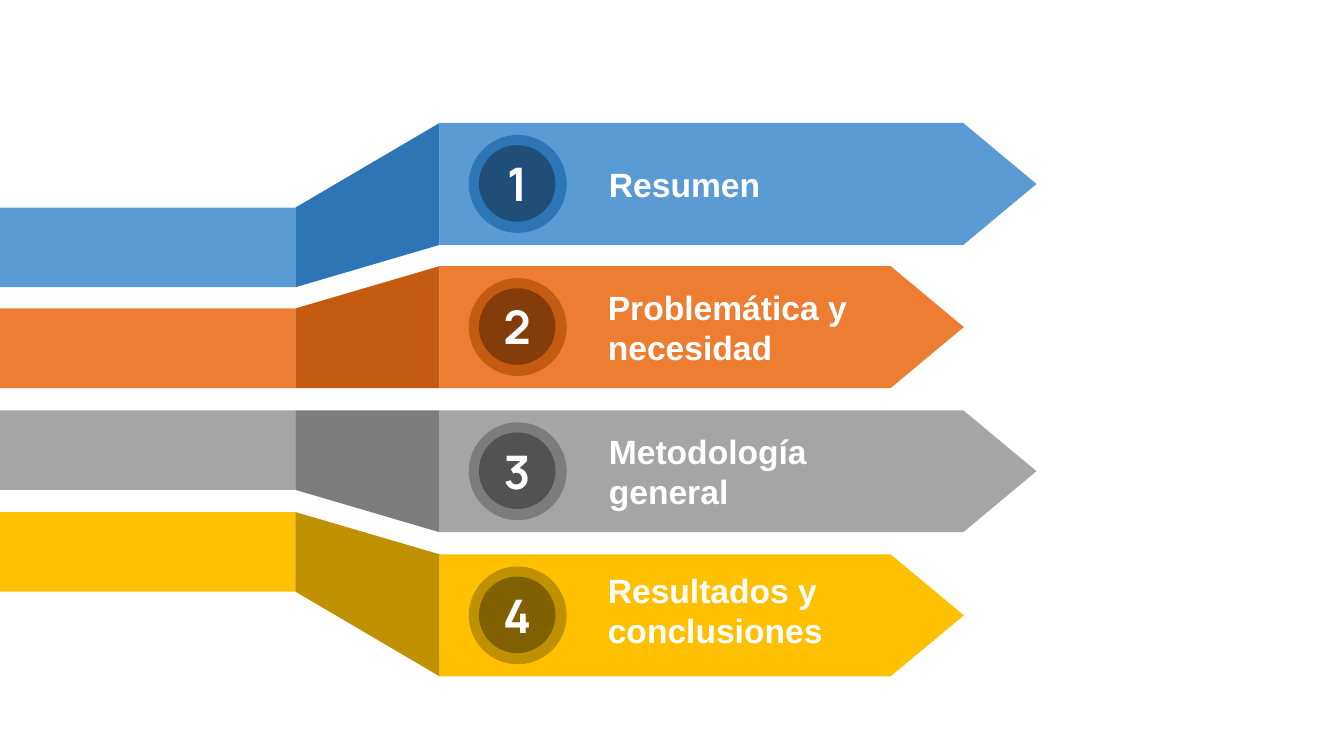
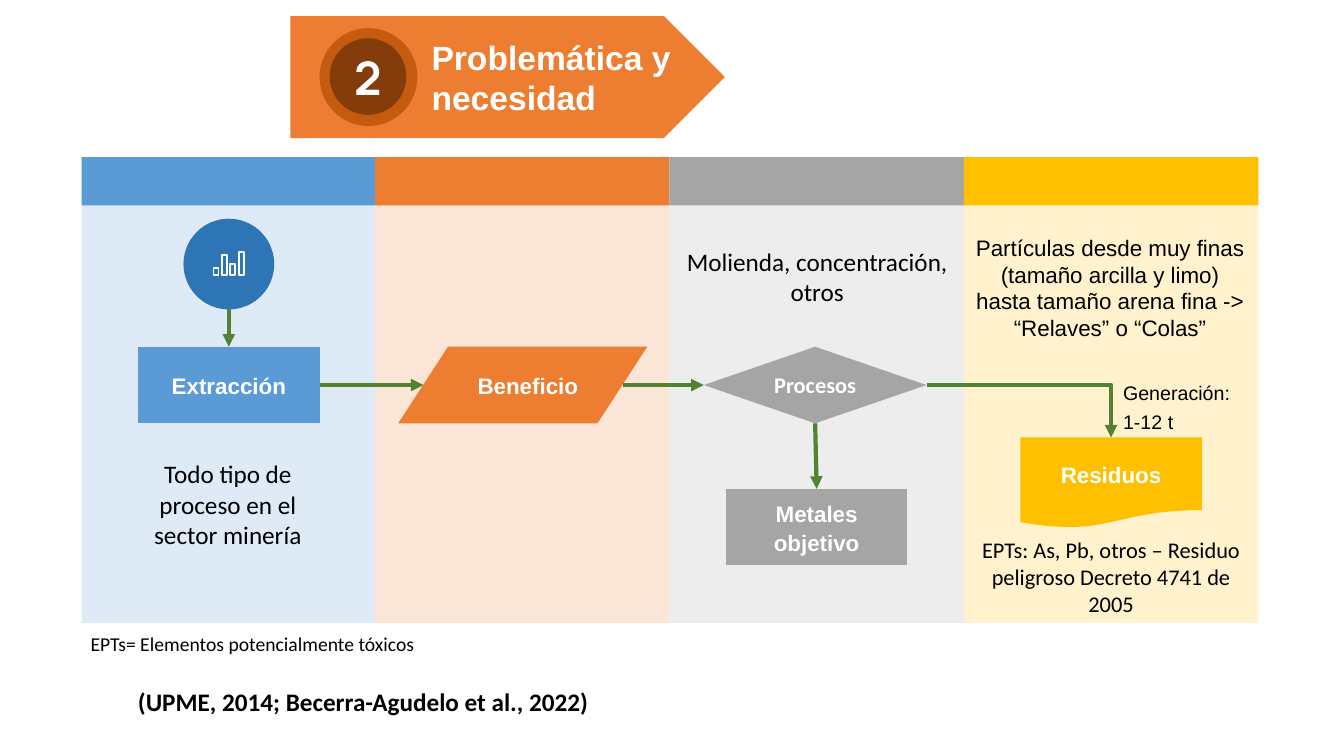
from lxml.etree import SubElement
from pptx import Presentation
from pptx.dml.color import RGBColor
from pptx.enum.shapes import MSO_CONNECTOR as LINK, MSO_SHAPE as KIND
from pptx.enum.text import MSO_ANCHOR as ANCHOR, MSO_AUTO_SIZE as FIT, PP_ALIGN as ALIGN
from pptx.oxml.ns import qn
from pptx.util import Pt

PX = 9144  # 100 px to the inch
COLORS = {
    "blue": "5B9BD5", "blue_ring": "2E75B6", "blue_dark": "1F4E79", "blue_pale": "DEEBF7",
    "orange": "ED7D31", "orange_ring": "C55A11", "orange_dark": "843C0B", "orange_pale": "FBE5D6",
    "gray": "A5A5A5", "gray_ring": "7C7C7C", "gray_dark": "525252", "gray_pale": "EDEDED",
    "gold": "FFC000", "gold_ring": "BF9000", "gold_dark": "806000", "gold_pale": "FFF2CC",
    "white": "FFFFFF", "black": "000000", "green": "548235",
}
RGB = {name: RGBColor.from_string(value) for name, value in COLORS.items()}
HUES = ["blue", "orange", "gray", "gold"]
ARROW_H = 121


def add_filled(slide, kind, box, color):
    shape = slide.shapes.add_shape(kind, *[n * PX for n in box])
    shape.shadow.inherit = False
    shape.fill.solid()
    shape.fill.fore_color.rgb = RGB[color]
    shape.line.fill.background()
    return shape


def write(shape, text, size, font, color="white", bold=True, align=ALIGN.CENTER,
          anchor=ANCHOR.MIDDLE, wrap=True, spacing=None):
    frame = shape.text_frame
    frame.text = text
    frame.word_wrap = wrap
    frame.auto_size = FIT.NONE
    frame.vertical_anchor = anchor
    for paragraph in frame.paragraphs:
        paragraph.alignment = align
        paragraph.line_spacing = spacing
        paragraph.font.size = Pt(size)
        paragraph.font.name = font
        paragraph.font.bold = bold
        paragraph.font.color.rgb = RGB[color]


prs = Presentation()
prs.slide_width, prs.slide_height = 1333 * PX, 750 * PX
agenda = prs.slides.add_slide(prs.slide_layouts[6])
problem = prs.slides.add_slide(prs.slide_layouts[5])

# Agenda: ribbons that fold out towards the arrows
arrow_tops = [122 + 428 * i // 3 for i in range(4)]
for i, (hue, arrow_top) in enumerate(zip(HUES, arrow_tops)):
    strip_top = 206 + 302 * i // 3
    add_filled(agenda, KIND.RECTANGLE, (0, strip_top, 293, 79), hue)
    outline = agenda.shapes.build_freeform(293, strip_top, scale=PX)
    outline.add_line_segments([(436, arrow_top), (436, arrow_top + ARROW_H), (293, strip_top + 79)])
    fold = outline.convert_to_shape()
    fold.shadow.inherit = False
    fold.fill.solid()
    fold.fill.fore_color.rgb = RGB[hue + "_ring"]
    fold.line.fill.background()

# Numbered arrows of both slides: left, top, width, tip share, label left, label top
banners = [
    (agenda, "blue", 1, "Resumen", 436, arrow_tops[0], 592, 0.6, 594, 137),
    (agenda, "orange", 2, "Problemática y necesidad", 436, arrow_tops[1], 520, 0.6, 593, 279),
    (agenda, "gray", 3, "Metodología\ngeneral", 436, arrow_tops[2], 592, 0.6, 594, 422),
    (agenda, "gold", 4, "Resultados y\nconclusiones", 436, arrow_tops[3], 520, 0.6, 593, 560),
    (problem, "orange", 2, "Problemática y necesidad", 288, 16, 431, 0.5, 418, 31),
]
for slide, hue, number, text, left, top, width, tip, label_left, label_top in banners:
    arrow = add_filled(slide, KIND.PENTAGON, (left, top, width, ARROW_H), hue)
    arrow.adjustments[0] = tip
    add_filled(slide, KIND.OVAL, (left + 29, top + 12, 97, 97), hue + "_ring")
    disc = add_filled(slide, KIND.OVAL, (left + 39, top + 22, 76, 76), hue + "_dark")
    write(disc, str(number), 33, "Manrope", wrap=False)

    label_box = [n * PX for n in (label_left, label_top, 289, 91)]
    label = slide.shapes.title
    if label is None:
        label = slide.shapes.add_textbox(*label_box)
    else:
        label.left, label.top, label.width, label.height = label_box
        slide.shapes.element.append(label.element)  # bring the title in front of its arrow
    write(label, text, 24, "Arial", align=ALIGN.LEFT)

# Problem: four columns
for i, hue in enumerate(HUES):
    column_left = 81 + 875 * i // 3
    add_filled(problem, KIND.RECTANGLE, (column_left, 156, 292, 48), hue)
    add_filled(problem, KIND.RECTANGLE, (column_left, 204, 292, 414), hue + "_pale")

# Bar icon in its circle
add_filled(problem, KIND.OVAL, (182, 217, 90, 90), "blue_ring")
for i, bar_top in enumerate([266, 253, 262, 250]):
    bar = add_filled(problem, KIND.RECTANGLE, (212 + 25 * i // 3, bar_top, 5, 273 - bar_top), "blue_ring")
    bar.line.color.rgb = RGB["white"]
    bar.line.width = Pt(1)

# Flow steps
steps = {}
for text, kind, box, hue, font, spacing in [
    ("Extracción", KIND.FLOWCHART_PROCESS, (137, 344, 180, 76), "blue", "Arial", Pt(20.5)),
    ("Beneficio", KIND.FLOWCHART_DATA, (395, 344, 247, 76), "orange", "Arial", Pt(20.5)),
    ("Procesos", KIND.DIAMOND, (698, 344, 221, 76), "gray", "Calibri", None),
    ("Metales objetivo", KIND.FLOWCHART_PROCESS, (720, 485, 180, 76), "gray", "Arial", Pt(20.5)),
    ("Residuos", KIND.FLOWCHART_DOCUMENT, (1012, 434, 180, 90), "gold", "Arial", Pt(20.5)),
]:
    steps[text] = add_filled(problem, kind, box, hue)
    write(steps[text], text, 16, font, spacing=spacing)
steps["Beneficio"].text_frame.margin_left = 20 * PX

# Flow arrows, each end with the step and side it joins
for kind, start, start_joint, end, end_joint in [
    (LINK.STRAIGHT, (227, 307), None, (227, 344), ("Extracción", 0)),
    (LINK.STRAIGHT, (317, 382), ("Extracción", 3), (420, 382), None),
    (LINK.STRAIGHT, (618, 382), None, (698, 382), ("Procesos", 1)),
    (LINK.STRAIGHT, (808, 420), ("Procesos", 2), (810, 485), ("Metales objetivo", 0)),
    (LINK.ELBOW, (919, 382), ("Procesos", 3), (1102, 434), ("Residuos", 0)),
]:
    flow = problem.shapes.add_connector(kind, *[n * PX for n in start + end])
    if start_joint:
        flow.begin_connect(steps[start_joint[0]], start_joint[1])
    if end_joint:
        flow.end_connect(steps[end_joint[0]], end_joint[1])
    flow.line.color.rgb = RGB["green"]
    flow.line.width = Pt(3)
    properties = flow.element.spPr
    SubElement(properties.find(qn("a:ln")), qn("a:tailEnd"), type="triangle")
    SubElement(properties, qn("a:effectLst"))
    if kind == LINK.ELBOW:
        properties.find(qn("a:prstGeom")).set("prst", "bentConnector2")

# Remarks, footnote and citation
for text, box, size, font, bold, align, spacing in [
    ("Todo tipo de proceso en el sector minería", (136, 450, 180, 101), 18, "Calibri", False, ALIGN.CENTER, None),
    ("Molienda, concentración, otros", (667, 239, 287, 71), 18, "Calibri", False, ALIGN.CENTER, None),
    ("Partículas desde muy finas (tamaño arcilla y limo) hasta tamaño arena fina -> “Relaves” o “Colas”",
     (956, 227, 290, 118), 16, "Arial", False, ALIGN.CENTER, None),
    ("EPTs: As, Pb, otros – Residuo peligroso Decreto 4741 de 2005",
     (959, 527, 286, 91), 16, "Calibri", False, ALIGN.CENTER, None),
    ("Generación:\n1-12 t", (1104, 368, 155, 66), 14, "Arial", False, ALIGN.LEFT, Pt(20.5)),
    ("EPTs= Elementos potencialmente tóxicos", (80, 622, 379, 34), 14, "Calibri", False, ALIGN.LEFT, None),
    ("(UPME, 2014; Becerra-Agudelo et al., 2022)", (127, 676, 500, 40), 18, "Calibri", True, ALIGN.LEFT, None),
]:
    remark = problem.shapes.add_textbox(*[n * PX for n in box])
    write(remark, text, size, font, "black", bold, align, ANCHOR.TOP, spacing=spacing)

prs.save("out.pptx")
